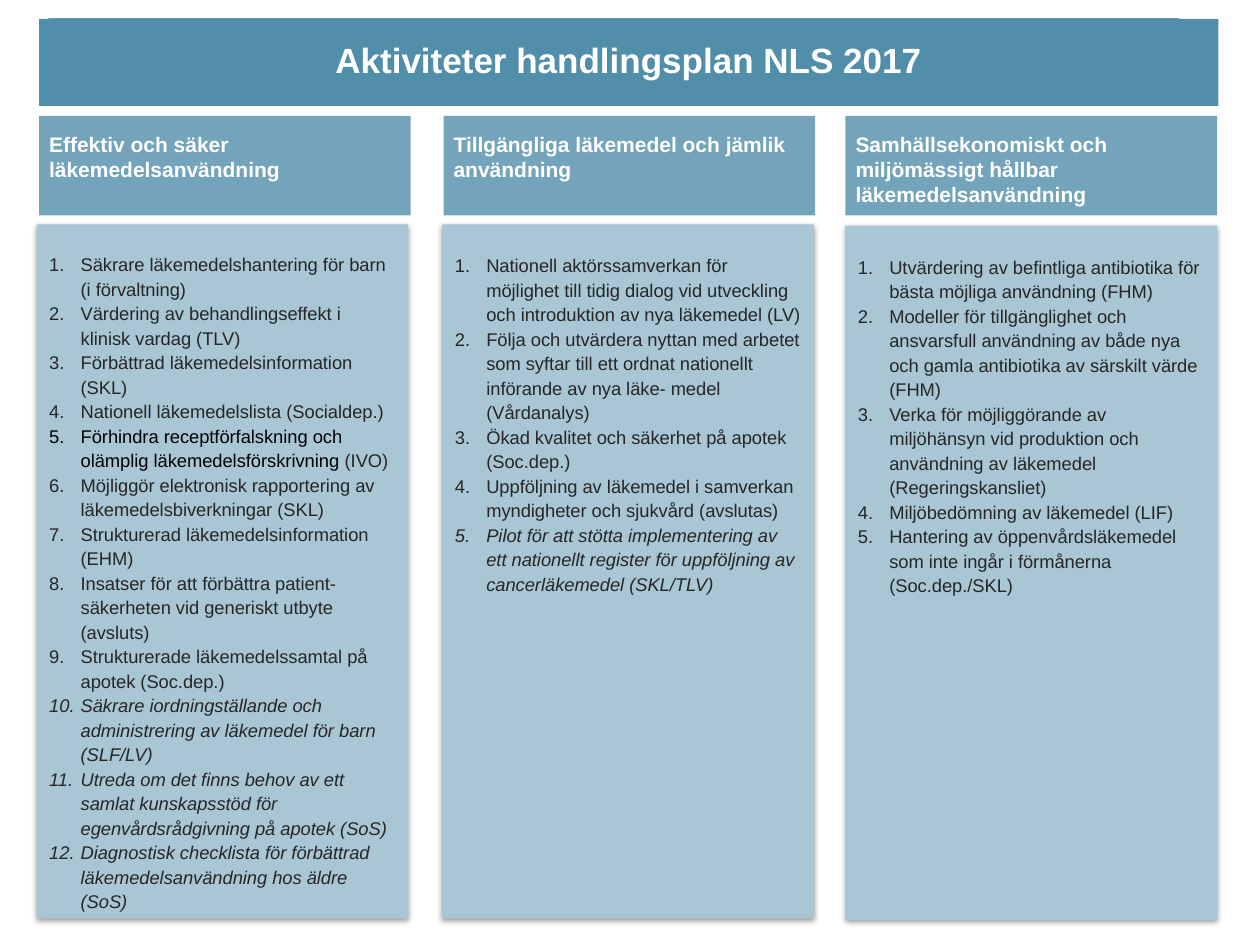
from lxml.etree import SubElement
from pptx import Presentation
from pptx.dml.color import RGBColor
from pptx.enum.shapes import MSO_SHAPE
from pptx.enum.text import MSO_ANCHOR, MSO_AUTO_SIZE, PP_ALIGN
from pptx.oxml.ns import qn
from pptx.util import Inches, Pt

WHITE = RGBColor(0xFF, 0xFF, 0xFF)
BLACK = RGBColor(0x00, 0x00, 0x00)
INK = RGBColor(0x26, 0x26, 0x26)
TITLE_BLUE = RGBColor(0x51, 0x8E, 0xAA)
HEADING_BLUE = RGBColor(0x73, 0xA4, 0xBB)
PANEL_BLUE = RGBColor(0xA8, 0xC6, 0xD4)

# Each column: heading and panel positions, heading lines, plain items, italic items.
# An item is a list of (text, colour) runs.
COLUMNS = [
    dict(
        heading_left=0.31, panel_left=0.29, panel_top=1.78, panel_inset=0.21,
        heading=["Effektiv och säker", "läkemedelsanvändning"],
        plain=[
            [("Säkrare läkemedelshantering för barn (i förvaltning)", INK)],
            [("Värdering av behandlingseffekt i klinisk vardag (TLV)", INK)],
            [("Förbättrad läkemedelsinformation (SKL)", INK)],
            [("Nationell läkemedelslista (Socialdep.)", INK)],
            [("Förhindra receptförfalskning och olämplig läkemedelsförskrivning ", BLACK),
             ("(IVO)", INK)],
            [("Möjliggör elektronisk rapportering av läkemedelsbiverkningar (SKL)", INK)],
            [("Strukturerad läkemedelsinformation (EHM)", INK)],
            [("Insatser för att förbättra patient-säkerheten vid generiskt utbyte "
              "(avsluts)", INK)],
            [("Strukturerade läkemedelssamtal på apotek (Soc.dep.)", INK)],
        ],
        italic=[
            [("Säkrare iordningställande och administrering av läkemedel för barn "
              "(SLF/LV)", INK)],
            [("Utreda om det finns behov av ett samlat kunskapsstöd för "
              "egenvårdsrådgivning på apotek (SoS)", INK)],
            [("Diagnostisk checklista för förbättrad läkemedelsanvändning hos äldre "
              "(SoS)", INK)],
        ],
    ),
    dict(
        heading_left=3.52, panel_left=3.51, panel_top=1.78, panel_inset=0.22,
        heading=["Tillgängliga läkemedel och jämlik användning"],
        plain=[
            [("Nationell aktörssamverkan för möjlighet till tidig dialog vid utveckling "
              "och introduktion av nya läkemedel (LV)", INK)],
            [("Följa och utvärdera nyttan med arbetet som syftar till ett ordnat "
              "nationellt införande av nya läke- medel (Vårdanalys)", INK)],
            [("Ökad kvalitet och säkerhet på apotek (Soc.dep.)", INK)],
            [("Uppföljning av läkemedel i samverkan myndigheter och sjukvård "
              "(avslutas)", INK)],
        ],
        italic=[
            [("Pilot för att stötta implementering av ett nationellt register för "
              "uppföljning av cancerläkemedel (SKL/TLV)", INK)],
        ],
    ),
    dict(
        heading_left=6.71, panel_left=6.71, panel_top=1.79, panel_inset=0.22,
        heading=["Samhällsekonomiskt och miljömässigt hållbar läkemedelsanvändning"],
        plain=[
            [("Utvärdering av befintliga antibiotika för bästa möjliga användning "
              "(FHM)", INK)],
            [("Modeller för tillgänglighet och ansvarsfull användning av både nya och "
              "gamla antibiotika av särskilt värde (FHM)", INK)],
            [("Verka för möjliggörande av miljöhänsyn vid produktion och användning av "
              "läkemedel (Regeringskansliet)", INK)],
            [("Miljöbedömning av läkemedel (LIF)", INK)],
            [("Hantering av öppenvårdsläkemedel som inte ingår i förmånerna "
              "(Soc.dep./SKL)", INK)],
        ],
        italic=[],
    ),
]


class PlanSlide:
    font_name = "Arial"
    column_width = 2.95

    def __init__(self, page):
        self.page = page
        self.placeholders = {item.placeholder_format.idx: item for item in page.placeholders}

    def box(self, index, left, top, width, height, fill, insets, anchor=MSO_ANCHOR.TOP):
        """Place and style the placeholder with this index, or a rectangle if there is none."""
        place = [Inches(value) for value in (left, top, width, height)]
        shape = self.placeholders.get(index)
        if shape is None:
            shape = self.page.shapes.add_shape(MSO_SHAPE.RECTANGLE, *place)
        shape.left, shape.top, shape.width, shape.height = place
        shape.fill.solid()
        shape.fill.fore_color.rgb = fill
        shape.line.fill.background()
        shape.shadow.inherit = False
        frame = shape.text_frame
        frame.word_wrap = True
        frame.auto_size = MSO_AUTO_SIZE.NONE
        frame.vertical_anchor = anchor
        (frame.margin_left, frame.margin_top,
         frame.margin_right, frame.margin_bottom) = [Inches(value) for value in insets]
        return shape

    def paragraph(self, shape, number, spacing=1.0, align=PP_ALIGN.LEFT):
        frame = shape.text_frame
        para = frame.paragraphs[0] if number == 0 else frame.add_paragraph()
        para.alignment = align
        para.line_spacing = spacing
        para.space_before = para.space_after = Pt(0)
        return para

    def span(self, para, text, size, colour, bold=False, italic=False):
        span = para.add_run()
        span.text = text
        font = span.font
        font.name, font.size = self.font_name, Pt(size)
        font.bold, font.italic = bold, italic
        font.color.rgb = colour

    def title(self, text):
        shape = self.box(0, 0.31, 0.15, 9.36, 0.69, TITLE_BLUE, [0.07] * 4, MSO_ANCHOR.MIDDLE)
        self.span(self.paragraph(shape, 0, 0.9, PP_ALIGN.CENTER), text, 20, WHITE, bold=True)

        backing = self.page.shapes.add_shape(
            MSO_SHAPE.ROUNDED_RECTANGLE, Inches(0.33), Inches(0.13), Inches(9.08), Inches(0.62))
        backing.adjustments[0] = 0.1
        backing.fill.solid()
        backing.fill.fore_color.rgb = TITLE_BLUE
        backing.line.color.rgb = WHITE
        backing.line.width = Pt(2)
        backing.shadow.inherit = False
        shape.element.addprevious(backing.element)

    def heading(self, index, left, lines):
        shape = self.box(index, left, 0.92, self.column_width, 0.79, HEADING_BLUE,
                         (0.08, 0.12, 0.04, 0.05))
        for number, line in enumerate(lines):
            self.span(self.paragraph(shape, number), line, 12, WHITE, bold=True)

    def panel(self, index, left, top, inset, plain, italic):
        shape = self.box(index, left, top, self.column_width, 5.51, PANEL_BLUE,
                         (0.1, inset, 0.1, 0.05))
        self.soft_shadow(shape)
        for number, item in enumerate(plain + italic):
            para = self.paragraph(shape, number, Pt(14))
            self.number_bullet(para)
            for text, colour in item:
                self.span(para, text, 10.5, colour, italic=number >= len(plain))

    def number_bullet(self, para):
        properties = para._p.get_or_add_pPr()
        properties.set("marL", str(Inches(0.25)))
        properties.set("indent", str(-Inches(0.25)))
        SubElement(properties, qn("a:buFont"), typeface=self.font_name)
        SubElement(properties, qn("a:buAutoNum"), type="arabicPeriod")

    def soft_shadow(self, shape):
        effects = shape.element.spPr.find(qn("a:effectLst"))
        shadow = SubElement(effects, qn("a:outerShdw"), blurRad=str(Pt(3.1)),
                            dist=str(Pt(1.6)), dir="5400000", rotWithShape="0")
        colour = SubElement(shadow, qn("a:srgbClr"), val=str(BLACK))
        SubElement(colour, qn("a:alpha"), val="38000")


def main():
    deck = Presentation()
    deck.slide_width, deck.slide_height = Inches(10), Inches(7.5)
    comparison_layout = deck.slide_layouts[4]
    plan = PlanSlide(deck.slides.add_slide(comparison_layout))
    plan.title("Aktiviteter handlingsplan NLS 2017")
    # The layout pairs heading and list placeholders as 1-2 and 3-4.
    for number, column in enumerate(COLUMNS):
        heading_index = 2 * number + 1
        plan.heading(heading_index, column["heading_left"], column["heading"])
        plan.panel(heading_index + 1, column["panel_left"], column["panel_top"],
                   column["panel_inset"], column["plain"], column["italic"])
    deck.save("out.pptx")


if __name__ == "__main__":
    main()
